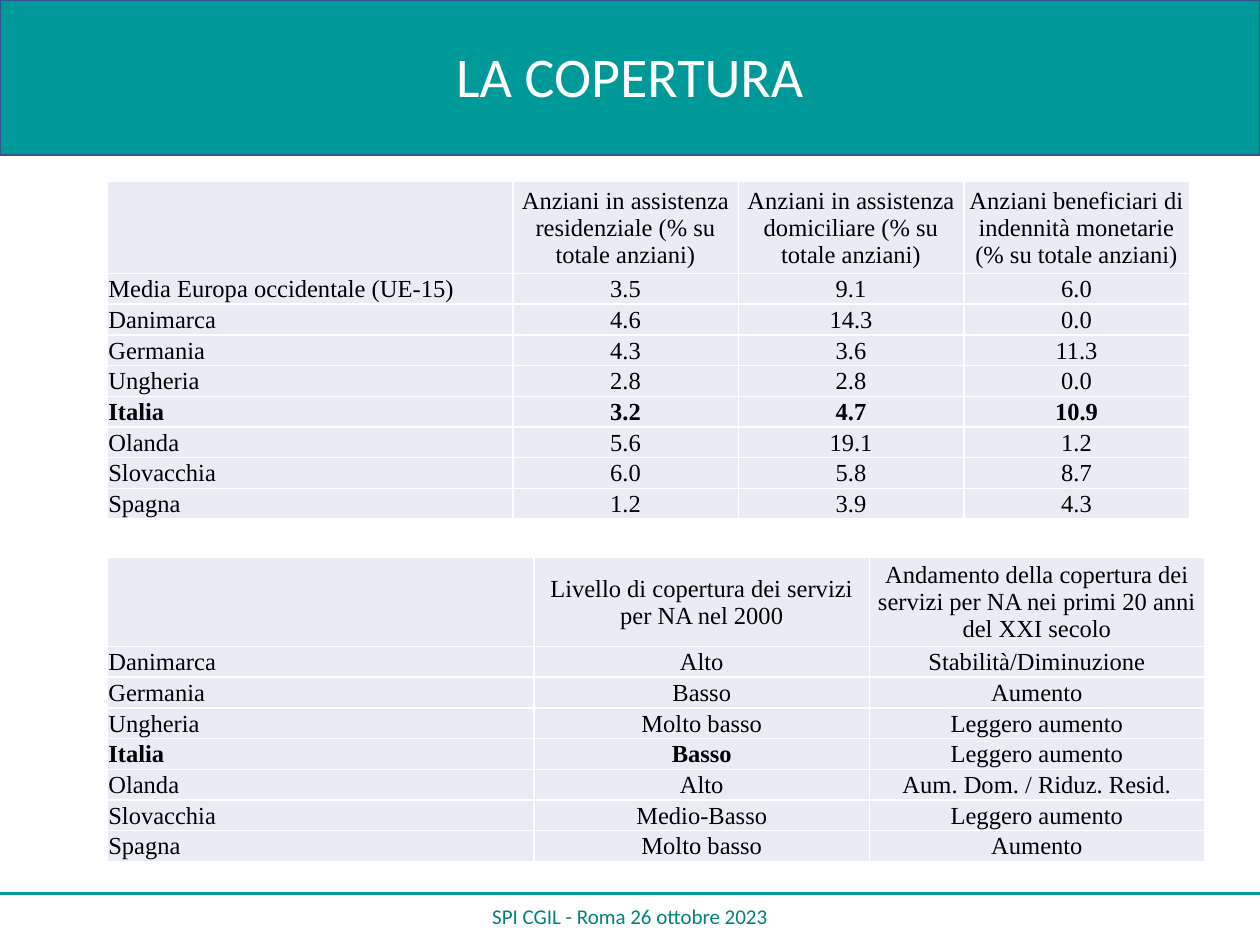
from lxml import etree
from pptx import Presentation
from pptx.dml.color import RGBColor
from pptx.enum.shapes import MSO_CONNECTOR, MSO_SHAPE
from pptx.enum.text import MSO_ANCHOR as Anchor, PP_ALIGN as Align
from pptx.oxml import parse_xml
from pptx.oxml.ns import nsdecls, qn
from pptx.util import Inches, Pt


def rgb(value):
    return RGBColor.from_string(value)


class Deck:
    TEAL, DARK_TEAL, NAVY = "009999", "008080", "325491"
    WHITE, BLACK, CELL = "FFFFFF", "000000", "E9EBF5"
    SANS, SERIF = "Calibri", "Times New Roman"

    def __init__(self):
        self.prs = Presentation()
        self.prs.slide_width, self.prs.slide_height = Inches(10), Inches(7.5)
        self.slide = self.prs.slides.add_slide(self.prs.slide_layouts[6])

    def set_text(self, frame, text, size, font, color, align=Align.CENTER, bold=False):
        paragraph = frame.paragraphs[0]
        paragraph.text = text
        paragraph.alignment = align
        for run in paragraph.runs:
            run.font.size, run.font.name, run.font.bold = Pt(size), font, bold
            run.font.color.rgb = rgb(color)

    def band(self, left, top, width, height):
        band = self.slide.shapes.add_shape(
            MSO_SHAPE.RECTANGLE, *map(Inches, (left, top, width, height)))
        band.shadow.inherit = False
        band.fill.solid()
        band.fill.fore_color.rgb = rgb(self.TEAL)
        band.line.color.rgb = rgb(self.NAVY)
        band.line.width = Pt(1)

    def rule(self, x1, y1, x2, y2):
        rule = self.slide.shapes.add_connector(
            MSO_CONNECTOR.STRAIGHT, *map(Inches, (x1, y1, x2, y2)))
        rule.line.color.rgb = rgb(self.TEAL)
        rule.line.width = Pt(2)
        etree.SubElement(rule._element.spPr, qn("a:effectLst"))

    def text(self, left, top, width, height, text, size, color):
        box = self.slide.shapes.add_textbox(*map(Inches, (left, top, width, height)))
        box.text_frame.word_wrap = True
        box.text_frame.vertical_anchor = Anchor.MIDDLE
        self.set_text(box.text_frame, text, size, self.SANS, color)

    def borders(self, cell):
        properties = cell._tc.get_or_add_tcPr()
        for index, side in enumerate(("lnL", "lnR", "lnT", "lnB")):
            properties.insert(index, parse_xml(
                f'<a:{side} {nsdecls("a")} w="{Pt(1)}"><a:solidFill>'
                f'<a:srgbClr val="{self.WHITE}"/></a:solidFill></a:{side}>'))

    def table(self, left, top, widths, header_height, row_height, rows, bold_cells):
        heights = [header_height] + [row_height] * (len(rows) - 1)
        table = self.slide.shapes.add_table(
            len(rows), len(widths),
            *map(Inches, (left, top, sum(widths), sum(heights)))).table
        table.first_row = table.horz_banding = False
        for column, width in zip(table.columns, widths):
            column.width = Inches(width)
        for row, height in zip(table.rows, heights):
            row.height = Inches(height)
        for r, values in enumerate(rows):
            for c, value in enumerate(values):
                cell = table.cell(r, c)
                cell.fill.solid()
                cell.fill.fore_color.rgb = rgb(self.CELL)
                self.borders(cell)
                if not value:
                    continue
                cell.vertical_anchor = Anchor.MIDDLE
                cell.margin_left = cell.margin_right = cell.margin_top = Inches(0.01)
                cell.margin_bottom = 0
                self.set_text(cell.text_frame, value, 14, self.SERIF, self.BLACK,
                              Align.CENTER if c else Align.LEFT, (r, c) in bold_cells)


COVERAGE = [
    ("", "Anziani in assistenza residenziale (% su totale anziani)",
     "Anziani in assistenza domiciliare (% su totale anziani)",
     "Anziani beneficiari di indennità monetarie (% su totale anziani)"),
    ("Media Europa occidentale (UE-15)", "3.5", "9.1", "6.0"),
    ("Danimarca", "4.6", "14.3", "0.0"),
    ("Germania", "4.3", "3.6", "11.3"),
    ("Ungheria", "2.8", "2.8", "0.0"),
    ("Italia", "3.2", "4.7", "10.9"),
    ("Olanda", "5.6", "19.1", "1.2"),
    ("Slovacchia", "6.0", "5.8", "8.7"),
    ("Spagna", "1.2", "3.9", "4.3"),
]
TREND = [
    ("", "Livello di copertura dei servizi per NA nel 2000",
     "Andamento della copertura dei servizi per NA nei primi 20 anni del XXI secolo"),
    ("Danimarca", "Alto", "Stabilità/Diminuzione"),
    ("Germania", "Basso", "Aumento"),
    ("Ungheria", "Molto basso", "Leggero aumento"),
    ("Italia", "Basso", "Leggero aumento"),
    ("Olanda", "Alto", "Aum. Dom. / Riduz. Resid."),
    ("Slovacchia", "Medio-Basso", "Leggero aumento"),
    ("Spagna", "Molto basso", "Aumento"),
]


def main():
    deck = Deck()

    # Title band and footer
    deck.band(0, 0, 10, 1.23)
    deck.rule(0, 7.09, 10, 7.09)
    deck.text(0, 0, 10, 1.2, "LA COPERTURA", 32, deck.WHITE)
    deck.text(3.31, 7.07, 3.38, 0.4, "SPI CGIL - Roma 26 ottobre 2023", 12, deck.DARK_TEAL)

    # Coverage level and trend by country
    deck.table(0.85, 4.42, [3.39] + [2.66] * 2, 0.56, 0.21, TREND,
               {(4, 0), (4, 1)})

    # Share of older people covered, by type of care
    deck.table(0.85, 1.44, [3.22] + [1.79] * 3, 0.73, 0.2, COVERAGE,
               {(5, c) for c in range(4)})

    deck.prs.save("out.pptx")


if __name__ == "__main__":
    main()
